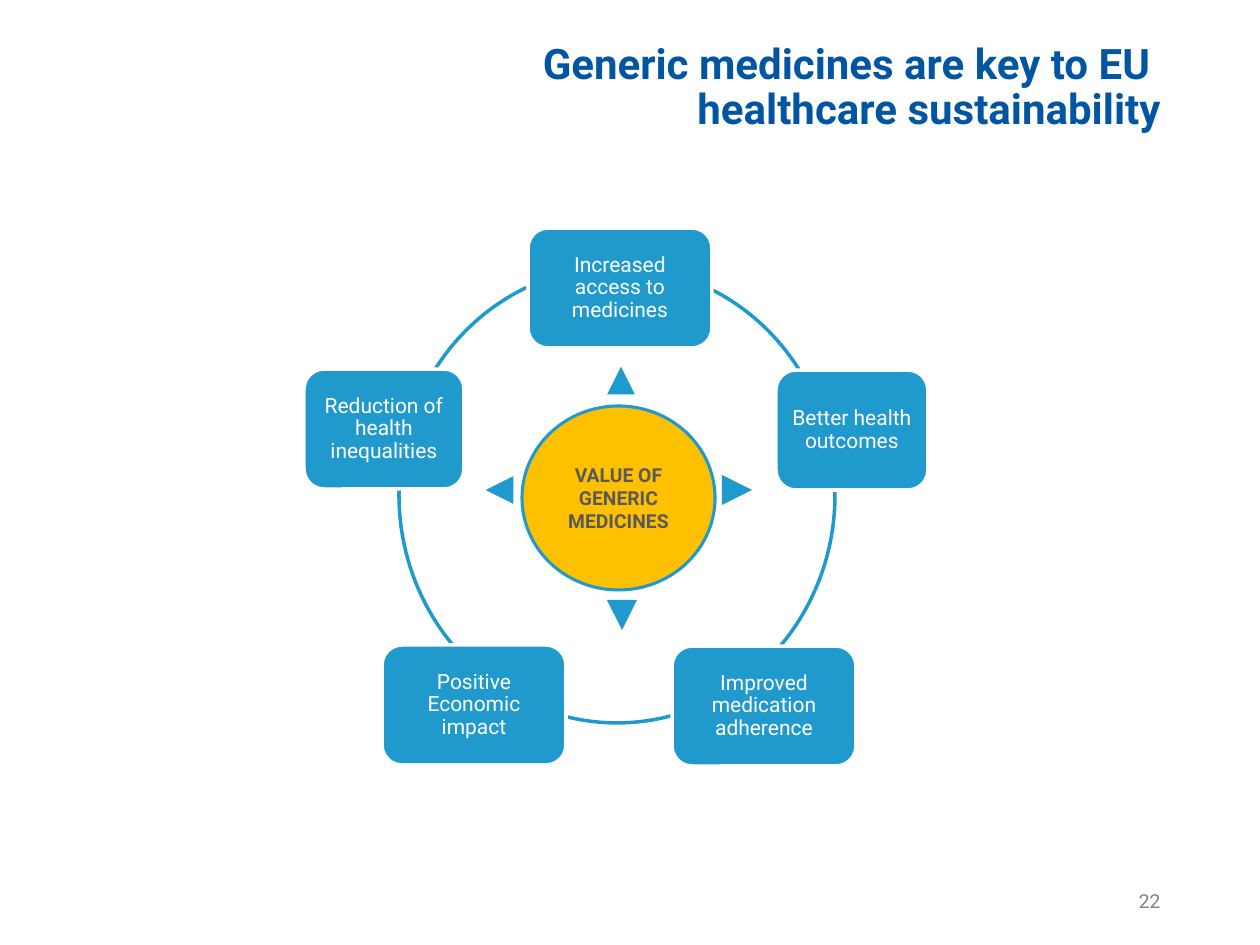
from dataclasses import dataclass

from pptx import Presentation
from pptx.dml.color import RGBColor as RGB
from pptx.enum.shapes import MSO_SHAPE as SHAPE
from pptx.enum.text import MSO_ANCHOR as ANCHOR, PP_ALIGN as ALIGN
from pptx.util import Emu, Pt


@dataclass(frozen=True)
class Theme:
    font: str = "Roboto"
    title: str = "0155A3"
    blue: str = "209ACD"
    gold: str = "FFC000"
    white: str = "FFFFFF"
    dark: str = "595959"
    grey: str = "828282"
    title_size: int = 24
    box_size: int = 12
    small_size: int = 11


THEME = Theme()
PX_PER_INCH = 126
ARROW = 30

# Benefits around the ring: text, left, top, width
BENEFITS = [
    ("Increased access to medicines", 528, 228, 184),
    ("Better health outcomes", 776, 370, 152),
    ("Improved medication adherence", 672, 646, 184),
    ("Positive Economic impact", 382, 645, 184),
    ("Reduction of health inequalities", 304, 369, 160),
]
BENEFIT_HEIGHT = 120

# Arrows out of the centre: left, top, rotation, outline colour
ARROWS = [
    (606, 365, 0, THEME.white),
    (607, 600, 180, None),
    (722, 475, 90, None),
    (484, 475, 270, THEME.white),
]


def px(n):
    return Emu(round(n * 914400 / PX_PER_INCH))


def write(sp, text, size, color, align=ALIGN.CENTER, bold=False, spacing=1.0):
    tf = sp.text_frame
    tf.word_wrap = True
    tf.vertical_anchor = ANCHOR.MIDDLE
    tf.text = text
    p = tf.paragraphs[0]
    p.alignment = align
    p.line_spacing = spacing
    for r in p.runs:
        r.font.name = THEME.font
        r.font.size = Pt(size)
        r.font.bold = bold
        r.font.color.rgb = RGB.from_string(color)


def add_text(slide, box, *args, **kwargs):
    write(slide.shapes.add_textbox(*map(px, box)), *args, **kwargs)


def add_shape(slide, kind, box, fill=None, line=None, weight=0.75):
    sp = slide.shapes.add_shape(kind, *map(px, box))
    sp.shadow.inherit = False
    if fill:
        sp.fill.solid()
        sp.fill.fore_color.rgb = RGB.from_string(fill)
    else:
        sp.fill.background()
    if line:
        sp.line.color.rgb = RGB.from_string(line)
        sp.line.width = Pt(weight)
    else:
        sp.line.fill.background()
    return sp


def add_benefit(slide, text, left, top, width):
    sp = add_shape(slide, SHAPE.ROUNDED_RECTANGLE,
                   (left, top, width, BENEFIT_HEIGHT),
                   THEME.blue, THEME.white, 2)
    tf = sp.text_frame
    tf.margin_left = tf.margin_right = tf.margin_top = tf.margin_bottom = px(7)
    write(sp, text, THEME.box_size, THEME.white, spacing=0.9)


def add_arrow(slide, left, top, rotation, line):
    sp = add_shape(slide, SHAPE.ISOSCELES_TRIANGLE,
                   (left, top, ARROW, ARROW), THEME.blue, line)
    sp.rotation = rotation


def main():
    prs = Presentation()
    prs.slide_width, prs.slide_height = px(1260), px(945)
    slide = prs.slides.add_slide(prs.slide_layouts[6])

    # Title and page number
    add_text(slide, (87, -3, 1086, 183),
             "Generic medicines are key to EU \vhealthcare sustainability",
             THEME.title_size, THEME.title, ALIGN.RIGHT, bold=True, spacing=0.9)
    add_text(slide, (890, 876, 283, 50), "22",
             THEME.small_size, THEME.grey, ALIGN.RIGHT)

    # Ring with the benefits on it
    add_shape(slide, SHAPE.OVAL, (399, 267, 436, 456), line=THEME.blue, weight=2)
    for benefit in BENEFITS:
        add_benefit(slide, *benefit)

    # Centre and its arrows
    centre = add_shape(slide, SHAPE.OVAL, (522, 406, 193, 184),
                       THEME.gold, THEME.blue, 1.75)
    write(centre, "VALUE OF GENERIC MEDICINES",
          THEME.small_size, THEME.dark, bold=True)
    for arrow in ARROWS:
        add_arrow(slide, *arrow)

    prs.save("out.pptx")


if __name__ == "__main__":
    main()
